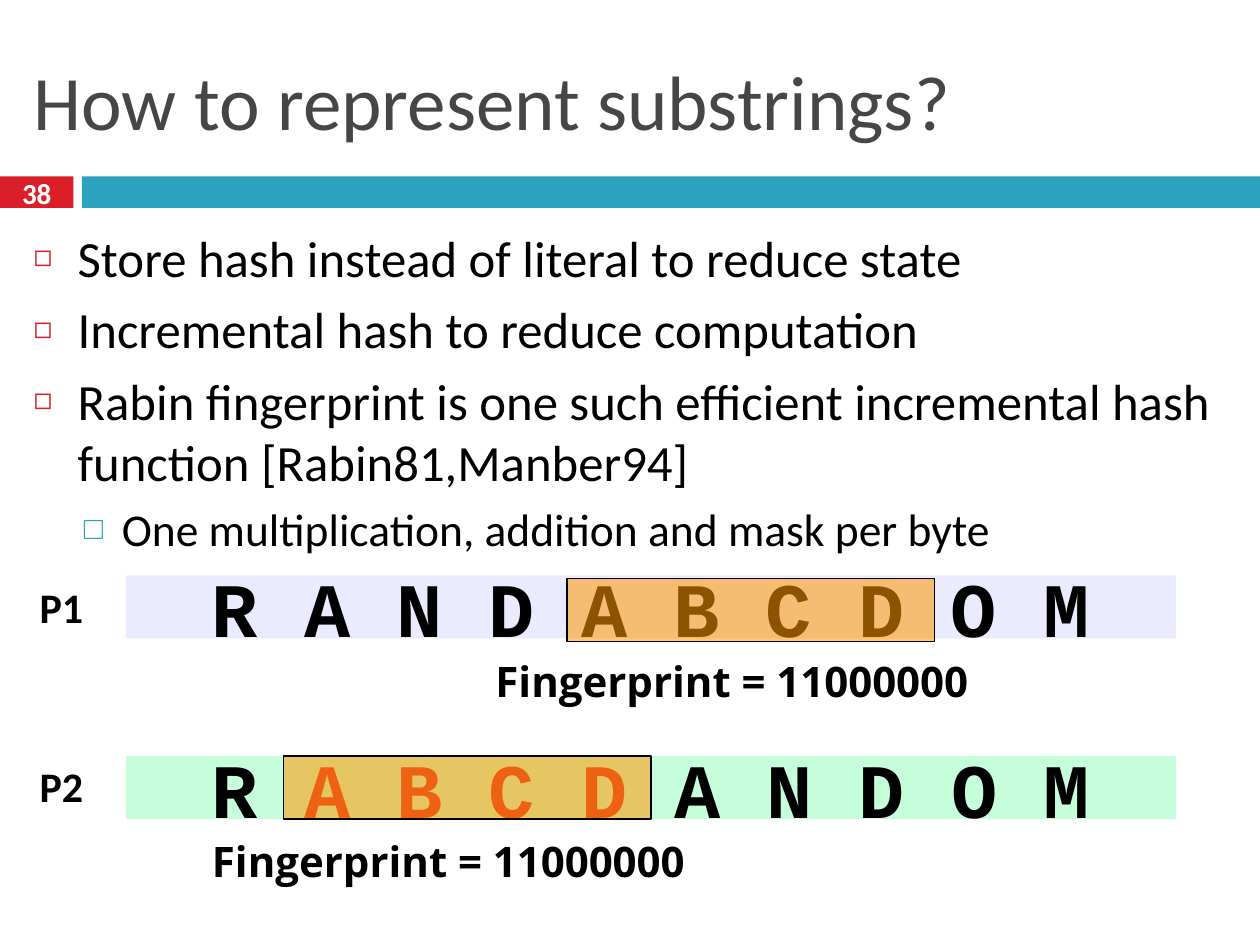
from lxml import etree
from pptx import Presentation
from pptx.dml.color import RGBColor
from pptx.enum.shapes import MSO_SHAPE
from pptx.enum.text import MSO_ANCHOR, MSO_AUTO_SIZE, PP_ALIGN
from pptx.oxml.ns import qn
from pptx.util import Pt

PX = 7620  # EMU per px, 120 px to the inch
COLORS = {
    "red": "DA1F28", "teal": "2DA2BF", "title": "464646", "black": "000000",
    "white": "FFFFFF", "lilac": "EBEBFF", "mint": "C6FEDB", "orange": "FF9900",
}
# level: text size, left margin px, hanging px, space before, bullet, color, bullet %
LEVELS = [
    (29, 42, 42, 6, "◻", "red", 60),
    (26, 84, 36, 5.5, "□", "teal", 70),
]
POINTS = [
    (0, "Store hash instead of literal to reduce state"),
    (0, "Incremental hash to reduce computation"),
    (0, "Rabin fingerprint is one such efficient incremental hash "
        "function [Rabin81,Manber94]"),
    (1, "One multiplication, addition and mask per byte"),
]


def color(name):
    return RGBColor.from_string(COLORS[name])


def place(shape, box):
    shape.left, shape.top, shape.width, shape.height = (n * PX for n in box)


def style(span, size, name="black", font="Calibri", bold=False):
    span.font.size, span.font.name, span.font.bold = Pt(size), font, bold
    span.font.color.rgb = color(name)


def add_rect(page, box, fill):
    shape = page.shapes.add_shape(MSO_SHAPE.RECTANGLE, *(n * PX for n in box))
    shape.shadow.inherit = False
    shape.fill.solid()
    shape.fill.fore_color.rgb = color(fill)
    shape.line.fill.background()
    return shape


def add_label(page, box, text, size, name="black", font="Calibri"):
    label = page.shapes.add_textbox(*(n * PX for n in box))
    label.text_frame.text = text
    style(label.text_frame.paragraphs[0].runs[0], size, name, font, True)
    return label


def add_bullet(para, char, name, percent, margin, hanging):
    props = para._p.get_or_add_pPr()
    props.set("marL", str(margin * PX))
    props.set("indent", str(-hanging * PX))
    holder = etree.SubElement(props, qn("a:buClr"))
    etree.SubElement(holder, qn("a:srgbClr"), val=COLORS[name])
    etree.SubElement(props, qn("a:buSzPct"), val=str(percent * 1000))
    etree.SubElement(props, qn("a:buChar"), char=char)


def add_header(page, box, number):
    left, top, width, height = box
    # Number tab and band
    add_rect(page, (left, top, 70, height), "red")
    add_rect(page, (left + 78, top, width - 78, height), "teal")
    label = add_label(page, (left, top - 4, 70, 40), number, 16.6, "white")
    label.text_frame.word_wrap = True
    label.text_frame.vertical_anchor = MSO_ANCHOR.MIDDLE
    label.text_frame.paragraphs[0].alignment = PP_ALIGN.CENTER


def fill_title(title, box, text):
    place(title, box)
    frame = title.text_frame
    frame.text = text
    frame.auto_size = MSO_AUTO_SIZE.NONE
    frame.vertical_anchor = MSO_ANCHOR.MIDDLE
    frame.paragraphs[0].alignment = PP_ALIGN.LEFT
    style(frame.paragraphs[0].runs[0], 44, "title")


def fill_body(body, box, points):
    place(body, box)
    frame = body.text_frame
    frame.auto_size = MSO_AUTO_SIZE.NONE
    for index, (level, text) in enumerate(points):
        para = frame.add_paragraph() if index else frame.paragraphs[0]
        para.text, para.level = text, level
        size, margin, hanging, before, char, name, percent = LEVELS[level]
        para.space_before = Pt(before)
        add_bullet(para, char, name, percent, margin, hanging)
        style(para.runs[0], size)


def add_packet(page, box, fill, spans, label, label_shift, window):
    left, top, width, height = box
    # Packet content
    band = add_rect(page, box, fill)
    frame = band.text_frame
    frame.word_wrap = False
    frame.vertical_anchor = MSO_ANCHOR.MIDDLE
    para = frame.paragraphs[0]
    para.alignment = PP_ALIGN.CENTER
    for text, name in spans:
        span = para.add_run()
        span.text = text
        style(span, 44, name, "Courier New", True)
    # Translucent hash window
    window_left, window_shift = left + window[0], window[1]
    cover = add_rect(page, (window_left, top + window_shift, 350, height), "orange")
    cover.line.color.rgb = color("black")
    cover.line.width = Pt(0.75)
    tint = cover.fill._xPr.find(qn("a:solidFill"))[0]
    etree.SubElement(tint, qn("a:alpha"), val="55000")
    # Packet name and fingerprint
    name_box = (left - 94, top + label_shift, 73, height)
    print_box = (window_left - 80, top + 70, 510, height)
    add_label(page, name_box, label, 24)
    add_label(page, print_box, "Fingerprint = 11000000", 24, font="Open Sans")


def main():
    deck = Presentation()
    deck.slide_width, deck.slide_height = 1200 * PX, 900 * PX
    page = deck.slides.add_slide(deck.slide_layouts[1])
    fill_title(page.shapes.title, (20, 30, 1160, 130), "How to represent substrings?")
    fill_body(page.placeholders[1], (20, 210, 1160, 670), POINTS)
    add_header(page, (0, 168, 1200, 30), "38")
    add_packet(page, (120, 548, 1000, 60), "lilac",
               [("R A N D A B C D O M", "black")], "P1", 0, (420, 3))
    add_packet(page, (120, 720, 1000, 60), "mint",
               [("R ", "black"), ("A B C D", "red"), (" A N D O M", "black")],
               "P2", -2, (150, 0))
    deck.save("out.pptx")


if __name__ == "__main__":
    main()
